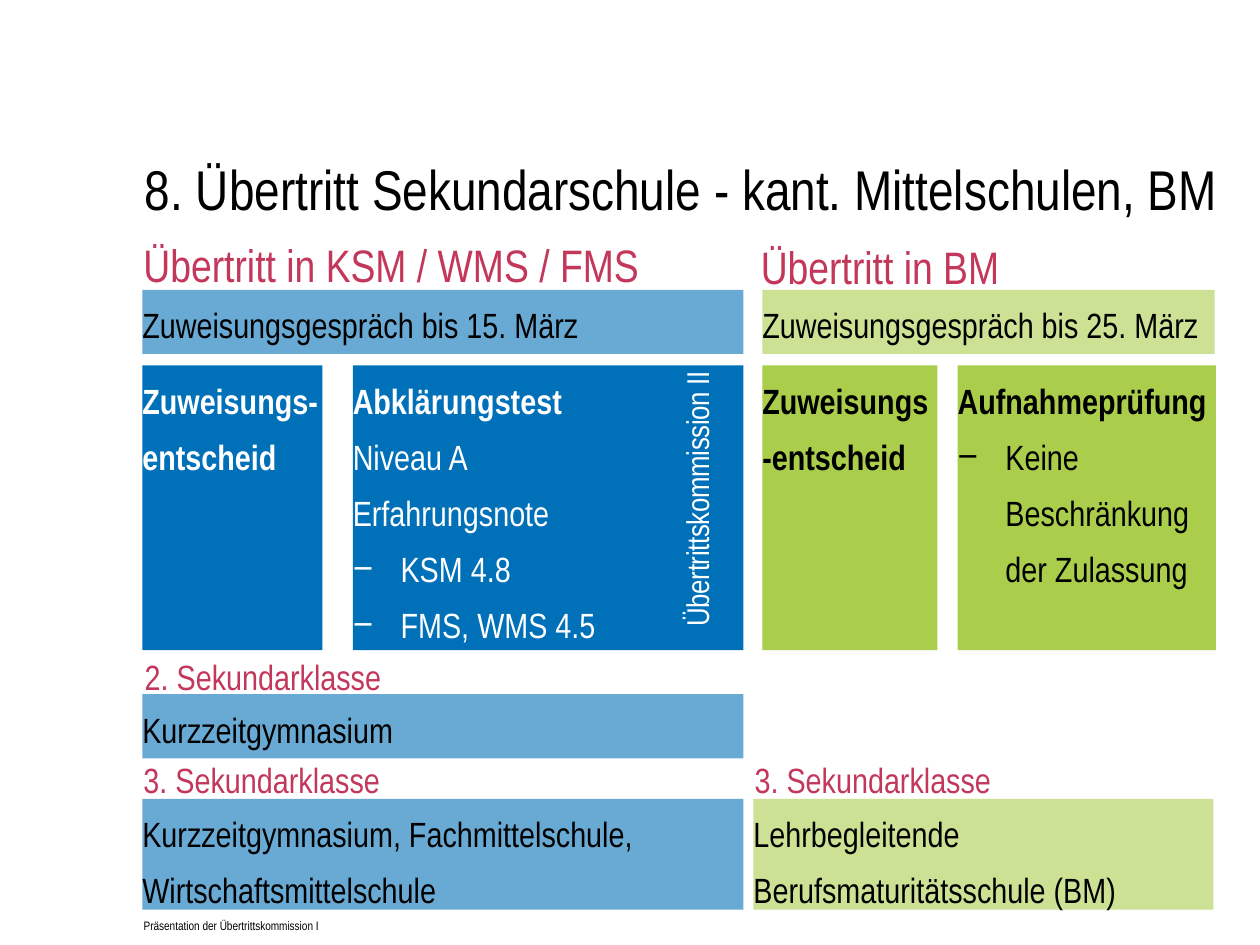
"""Builds the slide on moving from secondary school to the upper schools."""
from lxml import etree
from pptx import Presentation
from pptx.dml.color import RGBColor
from pptx.enum.shapes import MSO_SHAPE
from pptx.enum.text import MSO_ANCHOR, MSO_AUTO_SIZE, PP_ALIGN
from pptx.oxml.ns import qn
from pptx.util import Inches, Pt

RECTANGLE = MSO_SHAPE.RECTANGLE
TOP = MSO_ANCHOR.TOP
LEFT = PP_ALIGN.LEFT
NO_FIT = MSO_AUTO_SIZE.NONE

BLACK = RGBColor(0x00, 0x00, 0x00)
WHITE = RGBColor(0xFF, 0xFF, 0xFF)
BLUE = RGBColor(0x00, 0x70, 0xB8)
GREEN = RGBColor(0xAA, 0xCD, 0x4B)
RED = RGBColor(0xC3, 0x37, 0x5A)

FONT = "Arial Narrow"
DASH = "−"
DASH_FONT = "Arial"
INDENT = Inches(0.38)
PALE = 59

SCHOOL_LEFT, SCHOOL_WIDTH = 1.13, 4.77
TEST_LEFT, TEST_WIDTH = 2.8, 3.1
BM_LEFT, BM_WIDTH = 6.05, 3.59
EXAM_LEFT, EXAM_WIDTH = 7.6, 2.05
CLASS_LEFT, CLASS_WIDTH = 5.98, 3.65
TALK_ROW = (2.3, 0.51)
DECISION_ROW = (2.9, 2.26)
SECOND_CLASS_ROW = (5.51, 0.51)
THIRD_CLASS_ROW = (6.34, 0.88)


def set_font(para, size, color, bold=False):
    """Set the font of a whole paragraph."""
    para.font.name = FONT
    para.font.size = Pt(size)
    para.font.bold = bold
    para.font.color.rgb = color


def clear_margins(frame):
    """Let the text start at the top left corner of its box."""
    frame.margin_left = frame.margin_right = 0
    frame.margin_top = frame.margin_bottom = 0
    frame.vertical_anchor = TOP
    frame.word_wrap = True


def add_dash(para):
    """Give a paragraph a hanging dash."""
    properties = para._p.get_or_add_pPr()
    properties.set("marL", str(INDENT))
    properties.set("indent", str(-INDENT))
    etree.SubElement(properties, qn("a:buFont")).set("typeface", DASH_FONT)
    etree.SubElement(properties, qn("a:buChar")).set("char", DASH)


def add_panel(page, column, row, fill, color, lines, heading=False, alpha=None):
    """Add a filled panel; lines that start with the dash become list items."""
    left, width = column
    top, height = row
    panel = page.shapes.add_shape(
        RECTANGLE, Inches(left), Inches(top), Inches(width), Inches(height))
    panel.shadow.inherit = False
    panel.line.fill.background()
    panel.fill.solid()
    panel.fill.fore_color.rgb = fill
    if alpha:
        tint = panel.fill._xPr.find(qn("a:solidFill"))[0]
        etree.SubElement(tint, qn("a:alpha")).set("val", str(alpha * 1000))
    frame = panel.text_frame
    clear_margins(frame)
    for index, line in enumerate(lines):
        para = frame.add_paragraph() if index else frame.paragraphs[0]
        para.text = line.removeprefix(DASH)
        para.alignment = LEFT
        para.line_spacing = Pt(32)
        if line.startswith(DASH):
            add_dash(para)
        set_font(para, 20, color, heading and index == 0)


def add_label(page, left, top, width, height, text, size, color=RED):
    """Add a one-line text box and return it."""
    box = page.shapes.add_textbox(
        Inches(left), Inches(top), Inches(width), Inches(height))
    box.text_frame.word_wrap = True
    para = box.text_frame.paragraphs[0]
    para.text = text
    set_font(para, size, color)
    return box


def turn_upward(box):
    """Run the text of a box from bottom to top, set slightly tighter."""
    frame = box.text_frame
    frame._txBody.bodyPr.set("vert", "vert270")
    for span in frame.paragraphs[0].runs:
        span._r.get_or_add_rPr().set("spc", "-20")


def add_title(page, text):
    """Place and fill the title placeholder."""
    title = page.shapes.title
    title.left, title.top = Inches(1.15), Inches(1.23)
    title.width, title.height = Inches(8.82), Inches(0.63)
    title.text = text
    clear_margins(title.text_frame)
    title.text_frame.auto_size = NO_FIT
    para = title.text_frame.paragraphs[0]
    para.alignment = LEFT
    set_font(para, 32, BLACK)


def main():
    """Build and save the deck."""
    deck = Presentation()
    deck.slide_width, deck.slide_height = Inches(10), Inches(7.5)
    page = deck.slides.add_slide(deck.slide_layouts[5])
    add_title(page, "8. Übertritt Sekundarschule - kant. Mittelschulen, BM")

    school, bm = (SCHOOL_LEFT, SCHOOL_WIDTH), (BM_LEFT, BM_WIDTH)
    pale_panels = [
        (school, TALK_ROW, BLUE, "Zuweisungsgespräch bis 15. März"),
        (bm, TALK_ROW, GREEN, "Zuweisungsgespräch bis 25. März"),
        (school, SECOND_CLASS_ROW, BLUE, "Kurzzeitgymnasium"),
        (school, THIRD_CLASS_ROW, BLUE,
         "Kurzzeitgymnasium, Fachmittelschule, Wirtschaftsmittelschule"),
        ((CLASS_LEFT, CLASS_WIDTH), THIRD_CLASS_ROW, GREEN,
         "Lehrbegleitende Berufsmaturitätsschule (BM)"),
    ]
    for column, row, fill, text in pale_panels:
        add_panel(page, column, row, fill, BLACK, [text], alpha=PALE)

    decision = ["Zuweisungs-entscheid"]
    test = ["Abklärungstest", "Niveau A", "Erfahrungsnote",
            DASH + "KSM 4.8", DASH + "FMS, WMS 4.5"]
    exam = ["Aufnahmeprüfung", DASH + "Keine Beschränkung der Zulassung"]
    strong_panels = [
        ((SCHOOL_LEFT, 1.43), BLUE, WHITE, decision),
        ((TEST_LEFT, TEST_WIDTH), BLUE, WHITE, test),
        ((BM_LEFT, 1.39), GREEN, BLACK, decision),
        ((EXAM_LEFT, EXAM_WIDTH), GREEN, BLACK, exam),
    ]
    for column, fill, color, lines in strong_panels:
        add_panel(page, column, DECISION_ROW, fill, color, lines, heading=True)

    add_label(page, 1.04, 1.83, 4.54, 0.54, "Übertritt in KSM / WMS / FMS", 26)
    add_label(page, 5.94, 1.85, 3.69, 0.54, "Übertritt in BM", 26)
    for left, top, text in [(1.05, 5.15, "2. Sekundarklasse"),
                            (1.04, 5.97, "3. Sekundarklasse"),
                            (5.89, 5.97, "3. Sekundarklasse")]:
        add_label(page, left, top, 4.08, 0.44, text, 20)

    turn_upward(add_label(
        page, 5.33, 2.59, 0.5, 2.48, "Übertrittskommission II", 18, WHITE))
    footer = add_label(page, 1.14, 7.29, 5.12, 0.16,
                       "Präsentation der Übertrittskommission I", 7, BLACK)
    clear_margins(footer.text_frame)
    deck.save("out.pptx")


if __name__ == "__main__":
    main()
